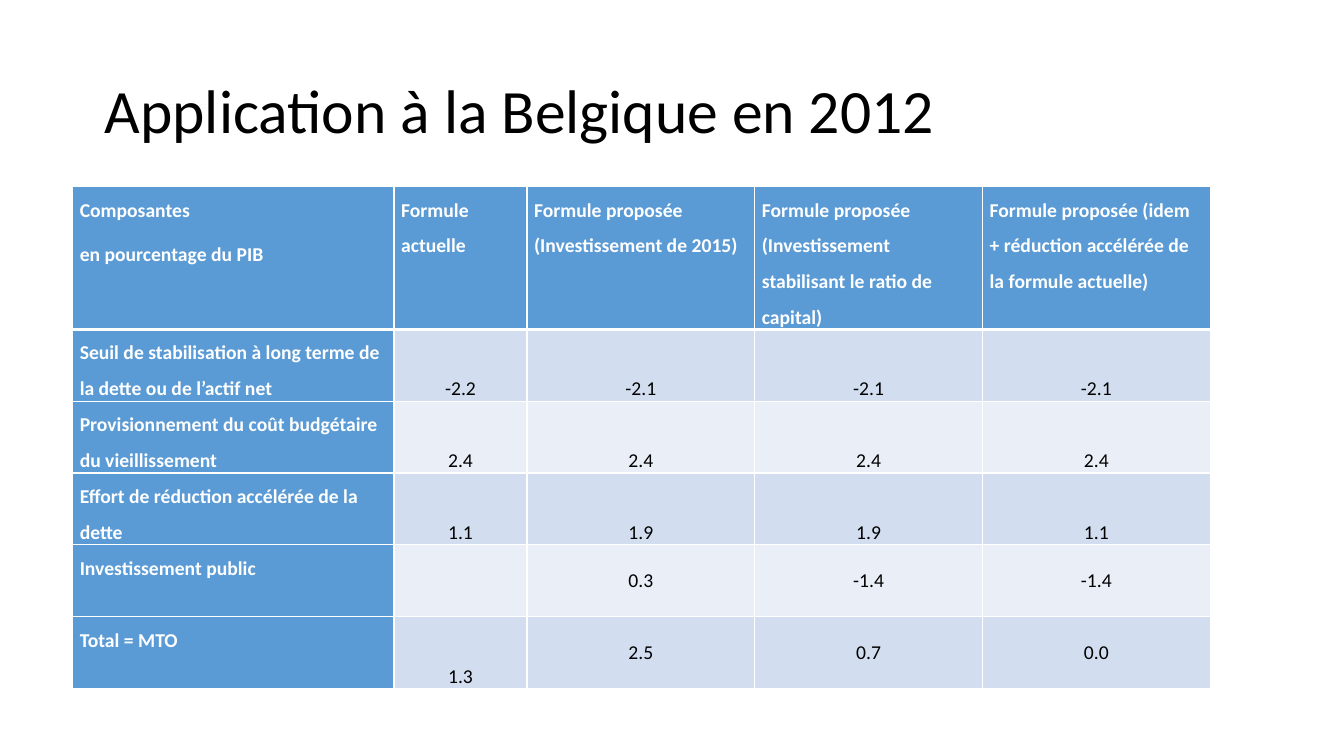
from lxml import etree
from pptx import Presentation
from pptx import util as u
from pptx.dml.color import RGBColor
from pptx.enum import text
from pptx.oxml import ns

FONT = "Calibri"
COLORS = {"ink": "000000", "white": "FFFFFF", "head": "5B9BD5",
          "dark": "D2DEEF", "light": "EAEFF7"}
WIDTHS = [8.1, 3.35, 5.74, 5.74, 5.74]
HEIGHTS = [3.6] + [1.81] * 5
ROWS = [
    ["Composantes\nen pourcentage du PIB", "Formule actuelle",
     "Formule proposée (Investissement de 2015)",
     "Formule proposée (Investissement stabilisant le ratio de capital)",
     "Formule proposée (idem + réduction accélérée de la formule actuelle)"],
    ["Seuil de stabilisation à long terme de la dette ou de l’actif net",
     "-2.2", "-2.1", "-2.1", "-2.1"],
    ["Provisionnement du coût budgétaire du vieillissement",
     "2.4", "2.4", "2.4", "2.4"],
    ["Effort de réduction accélérée de la dette", "1.1", "1.9", "1.9", "1.1"],
    ["Investissement public", "", "0.3", "-1.4", "-1.4"],
    ["Total = MTO", "1.3", "2.5", "0.7", "0.0"],
]


def color(name):
    return RGBColor.from_string(COLORS[name])


def style(par, size, ink, bold=False):
    for run in par.runs:
        run.font.name = FONT
        run.font.size = u.Pt(size)
        run.font.bold = bold
        run.font.color.rgb = color(ink)


def add_title(slide, words):
    box = slide.shapes.add_textbox(u.Cm(2.39), u.Cm(1.02), u.Cm(29.2), u.Cm(3.68))
    frame = box.text_frame
    frame.word_wrap = True
    frame.vertical_anchor = text.MSO_ANCHOR.MIDDLE
    frame.text = words
    par = frame.paragraphs[0]
    par.line_spacing = 0.9
    style(par, 44, "ink")


def add_edges(cell, row):
    props = cell._tc.get_or_add_tcPr()
    sides = {"lnL": 1, "lnR": 1, "lnT": 3 if row == 1 else 1,
             "lnB": 3 if row == 0 else 1}
    for spot, (side, width) in enumerate(sides.items()):
        line = etree.Element(ns.qn("a:" + side), w=str(u.Pt(width)))
        fill = etree.SubElement(line, ns.qn("a:solidFill"))
        etree.SubElement(fill, ns.qn("a:srgbClr"), val=COLORS["white"])
        props.insert(spot, line)


def fill_cell(cell, words, row, col):
    label = row == 0 or col == 0
    cell.margin_left = cell.margin_right = u.Cm(0.18)
    cell.margin_top = cell.margin_bottom = u.Cm(0)
    cell.fill.solid()
    cell.fill.fore_color.rgb = color("head" if label else "dark" if row % 2 else "light")
    add_edges(cell, row)
    cell.text_frame.text = words
    for par in cell.text_frame.paragraphs:
        if label:
            par.line_spacing = 1.5
            par.space_before = u.Pt(6)
            style(par, 14, "white", True)
        else:
            par.alignment = text.PP_ALIGN.CENTER
            par.line_spacing = 2.0 if row > 3 and col > 1 else 3.0
            par.space_before = u.Pt(6 if col == 1 and row in (1, 3) else 18)
            style(par, 14, "ink")


def add_grid(slide):
    grid = slide.shapes.add_table(
        len(ROWS), len(WIDTHS), u.Cm(1.83), u.Cm(4.7),
        u.Cm(sum(WIDTHS)), u.Cm(sum(HEIGHTS))).table
    grid.first_col = True
    for col, width in zip(grid.columns, WIDTHS):
        col.width = u.Cm(width)
    for row, height in zip(grid.rows, HEIGHTS):
        row.height = u.Cm(height)
    for row, line in enumerate(ROWS):
        for col, words in enumerate(line):
            fill_cell(grid.cell(row, col), words, row, col)


def main():
    deck = Presentation()
    deck.slide_width = u.Cm(33.87)
    deck.slide_height = u.Cm(19.05)
    slide = deck.slides.add_slide(deck.slide_layouts[6])
    add_title(slide, "Application à la Belgique en 2012")
    add_grid(slide)
    deck.save("out.pptx")


if __name__ == "__main__":
    main()
